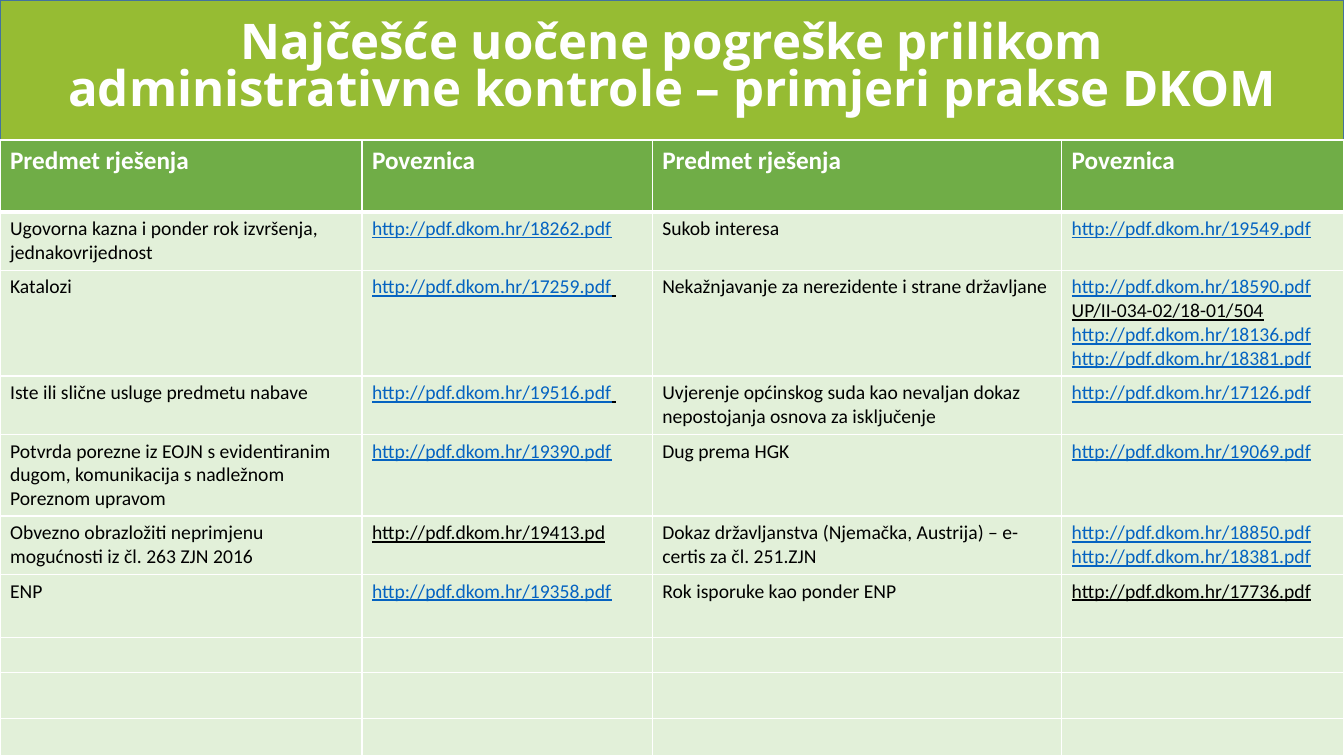
"""Build a slide with a title band and a table of decisions with their links."""
from dataclasses import dataclass

from lxml.etree import SubElement
from pptx import Presentation
from pptx.dml.color import RGBColor
from pptx.enum.shapes import MSO_SHAPE
from pptx.enum.text import MSO_ANCHOR, PP_ALIGN
from pptx.oxml.ns import qn
from pptx.util import Emu, Inches, Pt

WHITE = RGBColor(0xFF, 0xFF, 0xFF)
BLACK = RGBColor(0x00, 0x00, 0x00)
LIME = RGBColor(0x96, 0xBC, 0x33)
BAND_EDGE = RGBColor(0x43, 0x73, 0x9E)
HEADER_GREEN = RGBColor(0x70, 0xAD, 0x47)
PALE_GREEN = RGBColor(0xE2, 0xF0, 0xD9)
LINK_BLUE = RGBColor(0x05, 0x63, 0xC1)

WIDTH, HEIGHT = Inches(13.33), Inches(7.5)
BAND_SHARE = 18.53
COL_SHARES = (26.93, 21.6, 30.46, 21.01)
ROW_SHARES = (9.47, 7.73, 14, 7.73, 10.8, 7.73, 8.4, 4.53, 6.13, 4.95)
BODY_SIZE = 14


@dataclass(frozen=True)
class Ref:
    """A reference line: its text, colour and whether an underlined space follows."""
    text: str
    color: RGBColor = LINK_BLUE
    tail: bool = False


@dataclass(frozen=True)
class Decision:
    """A subject with the references that belong to it."""
    subject: str
    refs: tuple[Ref, ...]


def pdf(number: int, color: RGBColor = LINK_BLUE, tail: bool = False, ext: str = "pdf") -> Ref:
    """Return the reference to a numbered decision file."""
    return Ref(f"http://pdf.dkom.hr/{number}.{ext}", color, tail)


HEADINGS = ("Predmet rješenja", "Poveznica") * 2
LEFT = (
    Decision("Ugovorna kazna i ponder rok izvršenja, jednakovrijednost", (pdf(18262),)),
    Decision("Katalozi", (pdf(17259, tail=True),)),
    Decision("Iste ili slične usluge predmetu nabave", (pdf(19516, tail=True),)),
    Decision("Potvrda porezne iz EOJN s evidentiranim dugom, komunikacija s nadležnom "
             "Poreznom upravom", (pdf(19390),)),
    Decision("Obvezno obrazložiti neprimjenu mogućnosti iz čl. 263 ZJN 2016",
             (pdf(19413, BLACK, ext="pd"),)),
    Decision("ENP", (pdf(19358),)),
)
RIGHT = (
    Decision("Sukob interesa", (pdf(19549),)),
    Decision("Nekažnjavanje za nerezidente i strane državljane",
             (pdf(18590), Ref("UP/II-034-02/18-01/504", BLACK), pdf(18136), pdf(18381))),
    Decision("Uvjerenje općinskog suda kao nevaljan dokaz nepostojanja osnova za isključenje",
             (pdf(17126),)),
    Decision("Dug prema HGK", (pdf(19069),)),
    Decision("Dokaz državljanstva (Njemačka, Austrija) – e-certis za čl. 251.ZJN",
             (pdf(18850), pdf(18381))),
    Decision("Rok isporuke kao ponder ENP", (pdf(17736, BLACK),)),
)


def across(share: float) -> Emu:
    """Convert a percentage of the slide width to a length."""
    return Emu(round(WIDTH * share / 100))


def down(share: float) -> Emu:
    """Convert a percentage of the slide height to a length."""
    return Emu(round(HEIGHT * share / 100))


def add_text(p, text: str, *, size: float = BODY_SIZE, color: RGBColor = BLACK,
             font: str = "Calibri", bold: bool = False, underline: bool = False) -> None:
    """Add a formatted run to a paragraph."""
    r = p.add_run()
    r.text = text
    r.font.size, r.font.name = Pt(size), font
    r.font.bold, r.font.underline = bold, underline
    r.font.color.rgb = color


def add_title(slide, text: str) -> None:
    """Draw the title band and its centred text."""
    sp = slide.shapes.add_shape(MSO_SHAPE.RECTANGLE, 0, 0, WIDTH, down(BAND_SHARE))
    sp.shadow.inherit = False
    sp.fill.solid()
    sp.fill.fore_color.rgb = LIME
    sp.line.color.rgb = BAND_EDGE
    sp.line.width = Pt(1)
    tf = slide.shapes.add_textbox(across(2.75), down(3.2), across(94.5), down(11.87)).text_frame
    tf.word_wrap = True
    tf.vertical_anchor = MSO_ANCHOR.MIDDLE
    p = tf.paragraphs[0]
    p.alignment = PP_ALIGN.CENTER
    p.line_spacing = 0.79
    add_text(p, text, size=35.1, color=WHITE, font="Open Sans", bold=True)


def style_cell(cell, fill: RGBColor, top: float, bottom: float) -> None:
    """Give a cell its white borders and its fill."""
    tc_pr = cell._tc.get_or_add_tcPr()
    for side, width in (("L", 1), ("R", 1), ("T", top), ("B", bottom)):
        ln = SubElement(tc_pr, qn(f"a:ln{side}"), w=str(Pt(width)))
        SubElement(SubElement(ln, qn("a:solidFill")), qn("a:srgbClr"), val=str(WHITE))
    cell.fill.solid()
    cell.fill.fore_color.rgb = fill


def write_refs(cell, refs: tuple[Ref, ...]) -> None:
    """Write one underlined reference per paragraph."""
    tf = cell.text_frame
    for i, ref in enumerate(refs):
        p = tf.add_paragraph() if i else tf.paragraphs[0]
        add_text(p, ref.text, color=ref.color, underline=True)
        if ref.tail:
            add_text(p, " ", underline=True)


def add_decisions(slide) -> None:
    """Draw the table of decisions below the band."""
    tbl = slide.shapes.add_table(len(ROW_SHARES), len(COL_SHARES), 0, down(BAND_SHARE),
                                 WIDTH, down(sum(ROW_SHARES))).table
    for col, share in zip(tbl.columns, COL_SHARES):
        col.width = across(share)
    for i, (row, share) in enumerate(zip(tbl.rows, ROW_SHARES)):
        row.height = down(share)
        for cell in row.cells:
            style_cell(cell, PALE_GREEN if i else HEADER_GREEN,
                       3 if i == 1 else 1, 1 if i else 3)
            if i > len(LEFT):
                SubElement(cell.text_frame.paragraphs[0]._p, qn("a:endParaRPr"),
                           sz=str(BODY_SIZE * 100))
    for col, heading in enumerate(HEADINGS):
        add_text(tbl.cell(0, col).text_frame.paragraphs[0], heading,
                 size=18, color=WHITE, bold=True)
    for col, decisions in ((0, LEFT), (2, RIGHT)):
        for row, decision in enumerate(decisions, 1):
            add_text(tbl.cell(row, col).text_frame.paragraphs[0], decision.subject)
            write_refs(tbl.cell(row, col + 1), decision.refs)


def main() -> None:
    """Build and save the presentation."""
    prs = Presentation()
    prs.slide_width, prs.slide_height = WIDTH, HEIGHT
    slide = prs.slides.add_slide(prs.slide_layouts[6])
    add_title(slide, "Najčešće uočene pogreške prilikom administrativne kontrole – "
                     "primjeri prakse DKOM")
    add_decisions(slide)
    prs.save("out.pptx")


if __name__ == "__main__":
    main()
